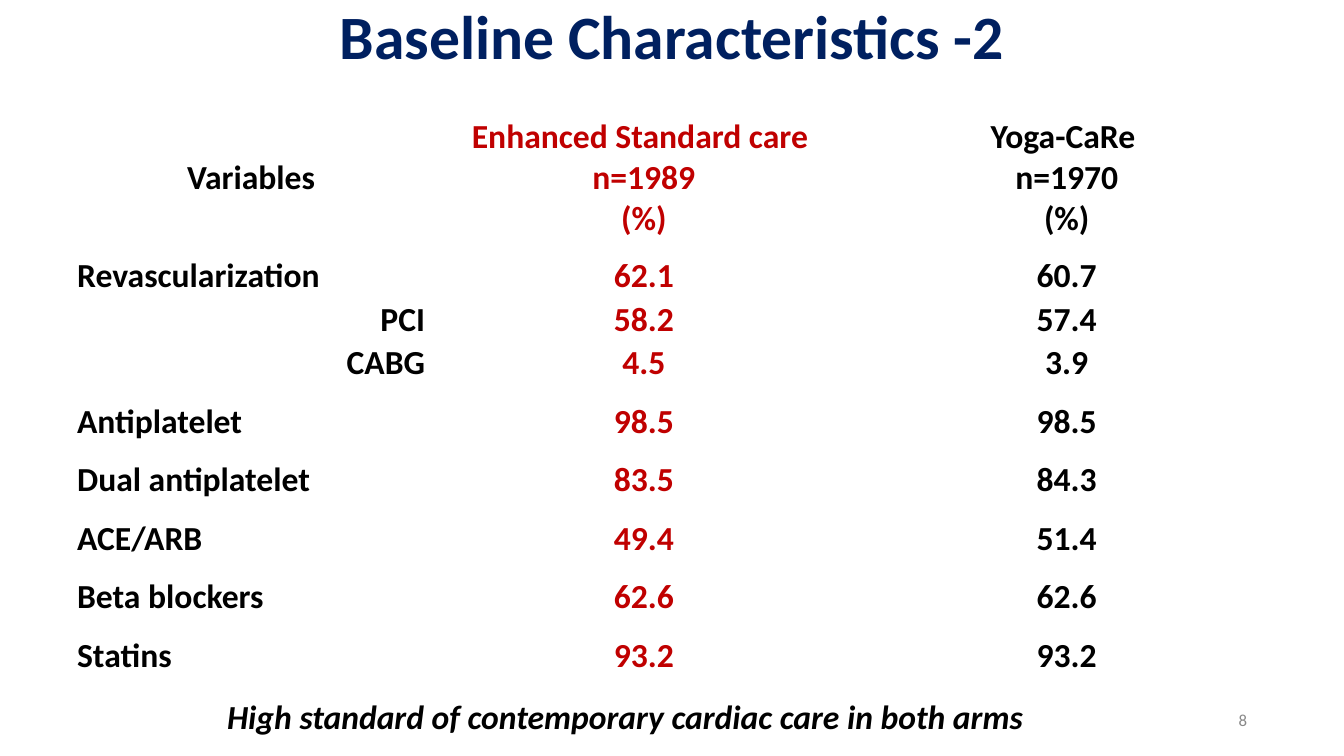
"""Build the baseline characteristics slide with its comparison table."""
import pptx
import pptx.dml.color
import pptx.enum.text
import pptx.util

Inches = pptx.util.Inches
Align = pptx.enum.text.PP_ALIGN
Anchor = pptx.enum.text.MSO_ANCHOR
COLORS = {"navy": "002060", "red": "C00000", "black": "000000", "gray": "888888"}


def set_frame(frame, inset, anchor, wrap=True):
    frame.margin_left = frame.margin_right = Inches(inset)
    frame.margin_top = frame.margin_bottom = Inches(inset)
    frame.vertical_anchor = anchor
    frame.word_wrap = wrap


def add_span(para, text, size, color, align, bold=True, italic=False, spacing=1.0):
    para.alignment = align
    para.line_spacing = spacing
    para.space_before = pptx.util.Pt(0)
    span = para.add_run()
    span.text = text
    span.font.name = "Calibri"
    span.font.size = pptx.util.Pt(size)
    span.font.bold = bold
    span.font.italic = italic
    span.font.color.rgb = pptx.dml.color.RGBColor.from_string(COLORS[color])


deck = pptx.Presentation()
deck.slide_width = Inches(13.33)
deck.slide_height = Inches(7.5)
page = deck.slides.add_slide(deck.slide_layouts[5])

title = page.shapes.title
title.left, title.top = Inches(0.92), Inches(-0.33)
title.width, title.height = Inches(11.5), Inches(1.45)
set_frame(title.text_frame, 0.05, Anchor.MIDDLE)
add_span(title.text_frame.paragraphs[0], "Baseline Characteristics -2", 44, "navy",
         Align.CENTER, spacing=0.9)

number_box = page.shapes.add_textbox(Inches(12.22), Inches(7), Inches(0.2), Inches(0.29))
set_frame(number_box.text_frame, 0.05, Anchor.MIDDLE, wrap=False)
add_span(number_box.text_frame.paragraphs[0], "8", 12, "gray", Align.RIGHT, bold=False)

rows = [
    (["Variables"], ["Enhanced Standard care ", "n=1989", "(%)"],
     ["Yoga-CaRe ", "n=1970", "(%)"]),
    (["Revascularization", "PCI", "CABG"], ["62.1", "58.2", "4.5"], ["60.7", "57.4", "3.9"]),
    (["Antiplatelet"], ["98.5"], ["98.5"]),
    (["Dual antiplatelet"], ["83.5"], ["84.3"]),
    (["ACE/ARB"], ["49.4"], ["51.4"]),
    (["Beta blockers"], ["62.6"], ["62.6"]),
    (["Statins"], ["93.2"], ["93.2"]),
]
column_widths = [3.6, 4.19, 4.2]
column_colors = ["black", "red", "black"]
row_heights = [1.32, 1.45] + [0.58] * 5

table = page.shapes.add_table(len(rows), len(column_widths), Inches(0.69), Inches(1.11),
                              Inches(sum(column_widths)), Inches(sum(row_heights))).table
table.first_row = False
table.horz_banding = False
for column, width in zip(table.columns, column_widths):
    column.width = Inches(width)

for row_index, (row, height) in enumerate(zip(rows, row_heights)):
    table.rows[row_index].height = Inches(height)
    is_header = row_index == 0
    inset = 0.05 if is_header else 0.075
    for column_index, lines in enumerate(row):
        cell = table.cell(row_index, column_index)
        cell.fill.background()
        cell.vertical_anchor = Anchor.MIDDLE
        cell.margin_left = cell.margin_right = Inches(inset)
        cell.margin_top = cell.margin_bottom = Inches(inset)
        for line_index, line in enumerate(lines):
            frame = cell.text_frame
            para = frame.add_paragraph() if line_index else frame.paragraphs[0]
            if is_header or column_index:
                align = Align.CENTER
            else:
                align = Align.RIGHT if line_index else Align.LEFT
            add_span(para, line, 24, column_colors[column_index], align,
                     spacing=1.0 if is_header else 1.07)

summary_box = page.shapes.add_textbox(Inches(1.06), Inches(6.85), Inches(10.28), Inches(0.49))
set_frame(summary_box.text_frame, 0.05, Anchor.TOP)
add_span(summary_box.text_frame.paragraphs[0],
         "High standard of contemporary cardiac care in both arms", 24, "black",
         Align.CENTER, italic=True)

deck.save("out.pptx")
